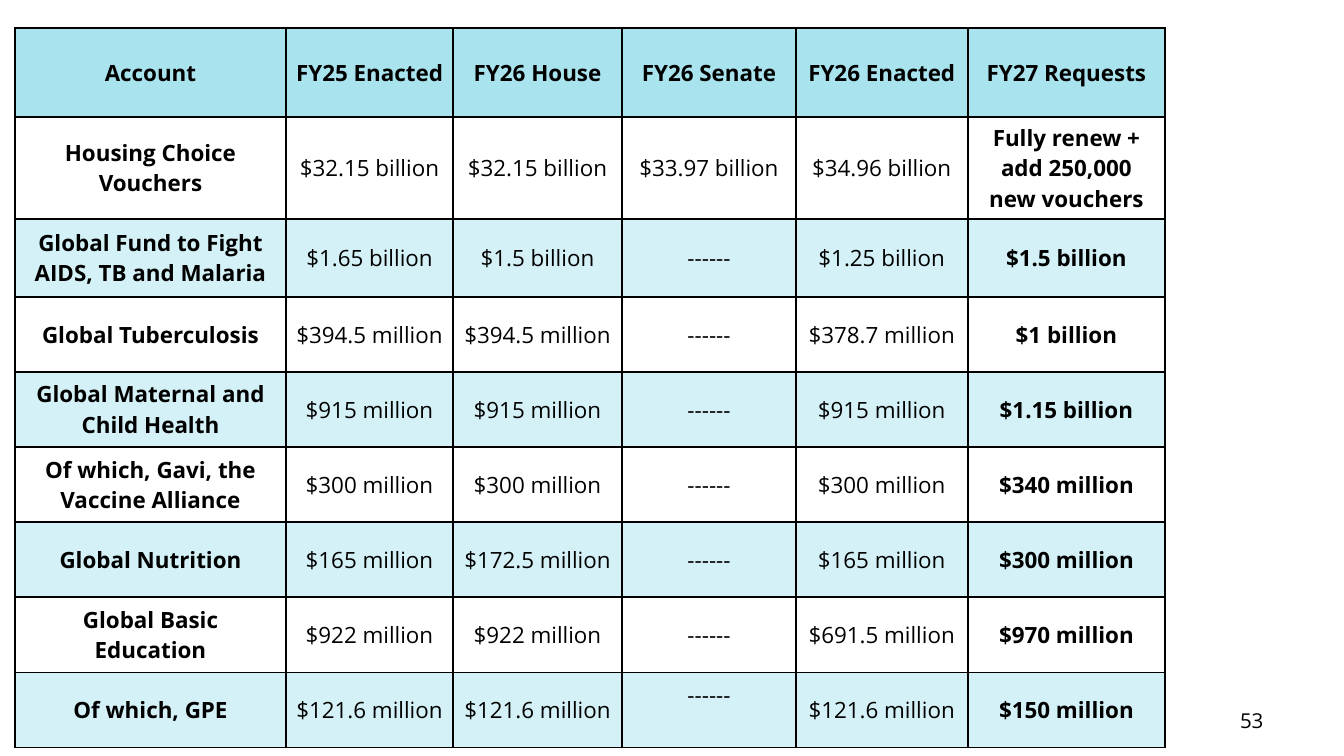
from lxml import etree
from pptx import Presentation
from pptx.dml.color import RGBColor
from pptx.enum.text import MSO_ANCHOR, PP_ALIGN
from pptx.oxml.ns import qn
from pptx.util import Cm, Pt

MIDDLE = MSO_ANCHOR.MIDDLE
CENTER, RIGHT = PP_ALIGN.CENTER, PP_ALIGN.RIGHT

COLORS = {"text": "000000", "line": "000000", "head": "A8E3EE",
          "band": "D3F1F6", "plain": "FFFFFF"}
DASH = "------"
ROWS = [
    ["Account", "FY25 Enacted", "FY26 House", "FY26 Senate",
     "FY26 Enacted", "FY27 Requests"],
    ["Housing Choice Vouchers", "$32.15 billion", "$32.15 billion",
     "$33.97 billion", "$34.96 billion",
     "Fully renew + add 250,000 new vouchers"],
    ["Global Fund to Fight AIDS, TB and Malaria", "$1.65 billion",
     "$1.5 billion", DASH, "$1.25 billion", "$1.5 billion"],
    ["Global Tuberculosis", "$394.5 million", "$394.5 million", DASH,
     "$378.7 million", "$1 billion"],
    ["Global Maternal and Child Health", "$915 million", "$915 million",
     DASH, "$915 million", "$1.15 billion"],
    ["Of which, Gavi, the Vaccine Alliance", "$300 million",
     "$300 million", DASH, "$300 million", "$340 million"],
    ["Global Nutrition", "$165 million", "$172.5 million", DASH,
     "$165 million", "$300 million"],
    ["Global Basic Education", "$922 million", "$922 million", DASH,
     "$691.5 million", "$970 million"],
    ["Of which, GPE", "$121.6 million", "$121.6 million", DASH,
     "$121.6 million", "$150 million"],
]
WIDTHS = [5.13, 3.15, 3.2, 3.28, 3.25, 3.73]
HEIGHTS = [1.68, 1.42, 1.47] + [1.42] * 6


class Deck:
    """Hold the style and the current slide."""

    def __init__(self, slide, font="Open Sans"):
        self.slide = slide
        self.font = font

    def color(self, name):
        return RGBColor.from_string(COLORS[name])

    def words(self, frame, text, size, align, bold=False):
        frame.text = text
        for para in frame.paragraphs:
            para.alignment = align
            for run in para.runs:
                run.font.name = self.font
                run.font.size = Pt(size)
                run.font.bold = bold
                run.font.color.rgb = self.color("text")

    def border(self, cell):
        props = cell._tc.get_or_add_tcPr()
        for side in ("lnL", "lnR", "lnT", "lnB"):
            line = etree.SubElement(props, qn(f"a:{side}"), w=str(Pt(1)))
            fill = etree.SubElement(line, qn("a:solidFill"))
            etree.SubElement(fill, qn("a:srgbClr"), val=COLORS["line"])

    def cell(self, cell, text, fill, bold):
        self.border(cell)
        cell.fill.solid()
        cell.fill.fore_color.rgb = self.color(fill)
        cell.vertical_anchor = MIDDLE
        cell.margin_left = cell.margin_right = Cm(0.18)
        cell.margin_top = cell.margin_bottom = Cm(0.1)
        self.words(cell.text_frame, text, 12, CENTER, bold)

    def table(self, left, top, rows, widths, heights):
        frame = self.slide.shapes.add_table(
            len(rows), len(widths), Cm(left), Cm(top),
            Cm(sum(widths)), Cm(sum(heights)))
        grid = frame.table
        for col, width in zip(grid.columns, widths):
            col.width = Cm(width)
        for row, height in zip(grid.rows, heights):
            row.height = Cm(height)
        last = len(widths) - 1
        for r, row in enumerate(rows):
            fill = "head" if r == 0 else "plain" if r % 2 else "band"
            for c, text in enumerate(row):
                bold = r == 0 or c in (0, last)
                self.cell(grid.cell(r, c), text, fill, bold)
        return grid

    def label(self, left, top, width, height, text, size, align):
        box = self.slide.shapes.add_textbox(
            Cm(left), Cm(top), Cm(width), Cm(height))
        frame = box.text_frame
        frame.word_wrap = True
        frame.vertical_anchor = MIDDLE
        self.words(frame, text, size, align)


def main():
    prs = Presentation()
    prs.slide_width, prs.slide_height = Cm(25.4), Cm(14.29)
    deck = Deck(prs.slides.add_slide(prs.slide_layouts[6]))
    grid = deck.table(0.28, 0.53, ROWS, WIDTHS, HEIGHTS)
    grid.cell(len(ROWS) - 1, 3).margin_bottom = Cm(0.69)
    deck.label(18.21, 13.23, 5.92, 0.76, "53", 11, RIGHT)
    prs.save("out.pptx")


if __name__ == "__main__":
    main()
